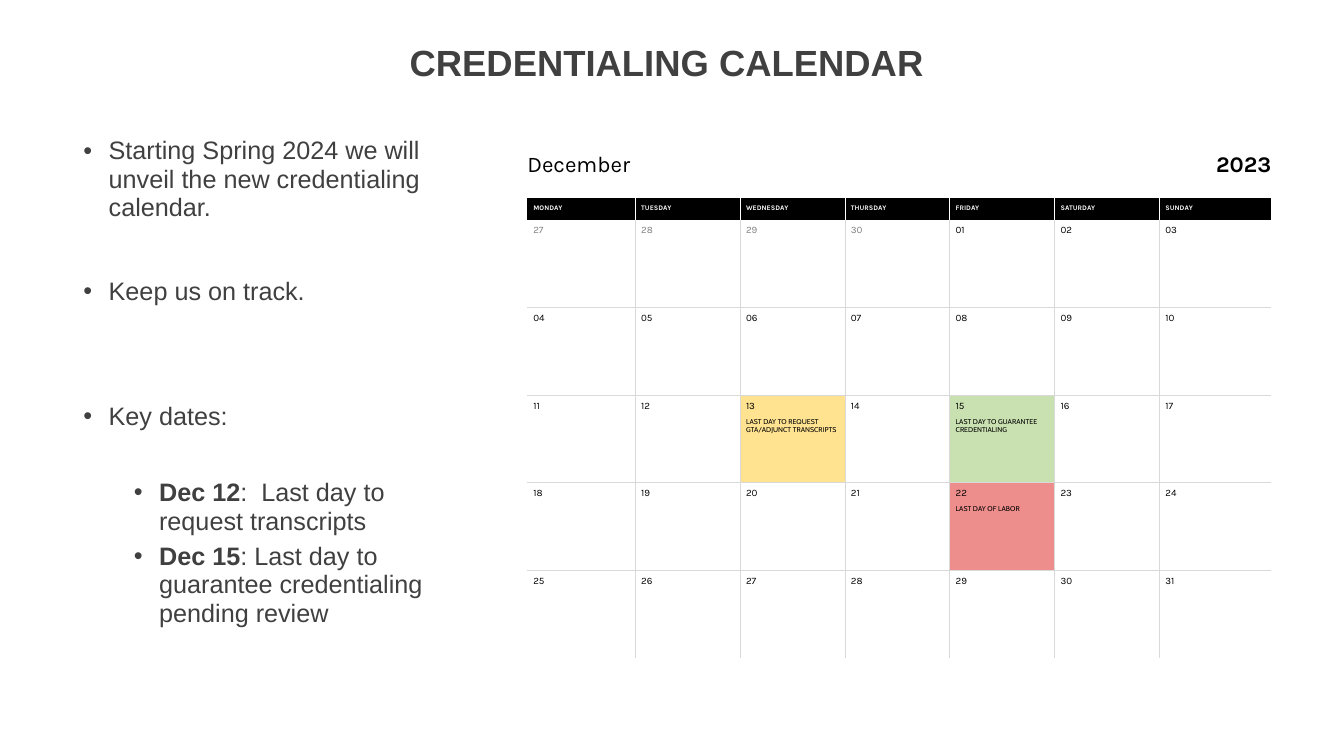
import pptx
import pptx.util
import pptx.dml.color
import pptx.enum.text
from lxml import etree
from pptx.oxml.ns import qn

# Content
TITLE = "CREDENTIALING CALENDAR "
# Each point: indent level, space before in points, (text, bold) runs
POINTS = [
    (0, 0, [("Starting Spring 2024 we will unveil the new credentialing calendar.", False)]),
    (0, 39.4, [("Keep us on track.", False)]),
    (0, 68.9, [("Key dates:", False)]),
    (1, 34.4, [("Dec 12", True), (":  Last day to request transcripts", False)]),
    (1, 5, [("Dec 15", True), (": Last day to guarantee credentialing pending review", False)]),
]
MONTH, YEAR = "December", "2023"
WEEKDAYS = ["MONDAY", "TUESDAY", "WEDNESDAY", "THURSDAY", "FRIDAY", "SATURDAY", "SUNDAY"]
PREVIOUS_DAYS = [27, 28, 29, 30]
DAYS = PREVIOUS_DAYS + list(range(1, 32))
# December day: (event, theme colour)
EVENTS = {
    13: ("LAST DAY TO REQUEST GTA/ADJUNCT TRANSCRIPTS", "request"),
    15: ("LAST DAY TO GUARANTEE CREDENTIALING", "guarantee"),
    22: ("LAST DAY OF LABOR", "labor"),
}

# Theme and layout
COLORS = {"text": "404040", "ink": "000000", "paper": "FFFFFF", "muted": "808080",
          "grid": "D9D9D9", "request": "FFE391", "guarantee": "C9E1B0", "labor": "EE8E8C"}
FORMATS = {
    "title": {"name": "Arial", "size": 26, "color": "text", "bold": True},
    "point": {"name": "Arial", "size": 18, "color": "text", "bold": False},
    "month": {"name": "Karla", "size": 16, "color": "ink", "bold": False},
    "year": {"name": "Karla", "size": 16, "color": "ink", "bold": True},
    "weekday": {"name": "Karla", "size": 5, "color": "paper", "bold": True},
    "day": {"name": "Karla", "size": 7, "color": "ink", "bold": False},
    "previous": {"name": "Karla", "size": 7, "color": "muted", "bold": False},
    "event": {"name": "Cabin", "size": 5, "color": "ink", "bold": False},
}
SLIDE = (13.33, 7.5)
TITLE_BOX = (1.26, 0.32, 10.81, 0.65)
POINTS_BOX = (0.73, 1.31, 4.06, 4.99)
CALENDAR_ORIGIN = (5.23, 1.31)
COLUMNS = [1.07] + [1.04] * 5 + [1.11]
WEEKS = len(DAYS) // len(WEEKDAYS)
ROWS = [0.65, 0.22] + [0.22, 0.65] * WEEKS
CELL_INSET = 0.06

Inches, Pt = pptx.util.Inches, pptx.util.Pt
Align, Anchor = pptx.enum.text.PP_ALIGN, pptx.enum.text.MSO_ANCHOR


def rgb(color):
    return pptx.dml.color.RGBColor.from_string(COLORS[color])


def add_run(paragraph, text, style, **changes):
    run = paragraph.add_run()
    run.text = text
    values = {**FORMATS[style], **changes}
    run.font.color.rgb = rgb(values.pop("color"))
    values["size"] = Pt(values["size"])
    for key, value in values.items():
        setattr(run.font, key, value)


def add_text_frame(slide, box):
    frame = slide.shapes.add_textbox(*map(Inches, box)).text_frame
    frame.word_wrap = True
    return frame


def add_points(frame):
    for index, (level, space, runs) in enumerate(POINTS):
        paragraph = frame.add_paragraph() if index else frame.paragraphs[0]
        properties = paragraph._p.get_or_add_pPr()
        properties.set("marL", str(Inches(0.25 + 0.5 * level)))
        properties.set("indent", str(Inches(-0.25)))
        etree.SubElement(properties, qn("a:buFont")).set("typeface", "Arial")
        etree.SubElement(properties, qn("a:buChar")).set("char", "•")
        for key, value in {"level": level, "line_spacing": 0.94, "space_before": Pt(space)}.items():
            setattr(paragraph, key, value)
        for text, bold in runs:
            add_run(paragraph, text, "point", bold=bold)


def write_cell(cell, text, style, inset=CELL_INSET, anchor=Anchor.MIDDLE, align=Align.LEFT):
    layout = {"margin_left": Inches(inset), "margin_right": 0, "margin_top": 0,
              "margin_bottom": 0, "vertical_anchor": anchor}
    for key, value in layout.items():
        setattr(cell, key, value)
    cell.text_frame.paragraphs[0].alignment = align
    add_run(cell.text_frame.paragraphs[0], text, style)


def fill_cell(cell, color):
    cell.fill.solid()
    cell.fill.fore_color.rgb = rgb(color)


def border_cell(cell, row, column):
    last_column, last_row = len(COLUMNS) - 1, len(ROWS) - 1
    week_row = row >= 2
    edges = {
        "lnL": row > 0 and column > 0,
        "lnR": row > 0 and column < last_column,
        "lnT": row > 2 and row % 2 == 0,
        "lnB": week_row and row % 2 == 1 and row < last_row,
    }
    properties = cell._tc.get_or_add_tcPr()
    for position, (edge, visible) in enumerate(edges.items()):
        line = etree.Element(qn("a:" + edge), w=str(Pt(0.5)))
        if visible:
            paint = etree.SubElement(line, qn("a:solidFill"))
            color = COLORS["grid" if week_row else "paper"]
            etree.SubElement(paint, qn("a:srgbClr")).set("val", color)
        else:
            etree.SubElement(line, qn("a:noFill"))
        properties.insert(position, line)


def add_calendar(slide):
    size = (sum(COLUMNS), sum(ROWS))
    calendar = slide.shapes.add_table(
        len(ROWS), len(COLUMNS), *map(Inches, CALENDAR_ORIGIN + size)).table
    calendar.first_row = calendar.horz_banding = False
    for column, width in zip(calendar.columns, COLUMNS):
        column.width = Inches(width)
    for row, height in zip(calendar.rows, ROWS):
        row.height = Inches(height)
    for row in range(len(ROWS)):
        for column in range(len(COLUMNS)):
            cell = calendar.cell(row, column)
            cell.fill.background()
            border_cell(cell, row, column)

    # Month, year and weekdays
    calendar.cell(0, 0).merge(calendar.cell(0, 1))
    write_cell(calendar.cell(0, 0), MONTH, "month", inset=0)
    write_cell(calendar.cell(0, len(COLUMNS) - 1), YEAR, "year", inset=0, align=Align.RIGHT)
    for column, weekday in enumerate(WEEKDAYS):
        fill_cell(calendar.cell(1, column), "ink")
        write_cell(calendar.cell(1, column), weekday, "weekday")

    # Days and their events
    for index, day in enumerate(DAYS):
        week, column = divmod(index, len(WEEKDAYS))
        day_cell, event_cell = (calendar.cell(2 + 2 * week + part, column) for part in (0, 1))
        previous = index < len(PREVIOUS_DAYS)
        write_cell(day_cell, f"{day:02}", "previous" if previous else "day")
        if day in EVENTS and not previous:
            event, color = EVENTS[day]
            write_cell(event_cell, event, "event", anchor=Anchor.TOP)
            fill_cell(day_cell, color)
            fill_cell(event_cell, color)


def main():
    deck = pptx.Presentation()
    deck.slide_width, deck.slide_height = map(Inches, SLIDE)
    slide = deck.slides.add_slide(deck.slide_layouts[6])

    # Title
    heading = add_text_frame(slide, TITLE_BOX)
    heading.vertical_anchor = Anchor.MIDDLE
    heading.paragraphs[0].alignment = Align.CENTER
    heading.paragraphs[0].line_spacing = 0.9
    add_run(heading.paragraphs[0], TITLE, "title")

    # Points on the left, calendar on the right
    add_points(add_text_frame(slide, POINTS_BOX))
    add_calendar(slide)
    deck.save("out.pptx")


if __name__ == "__main__":
    main()
